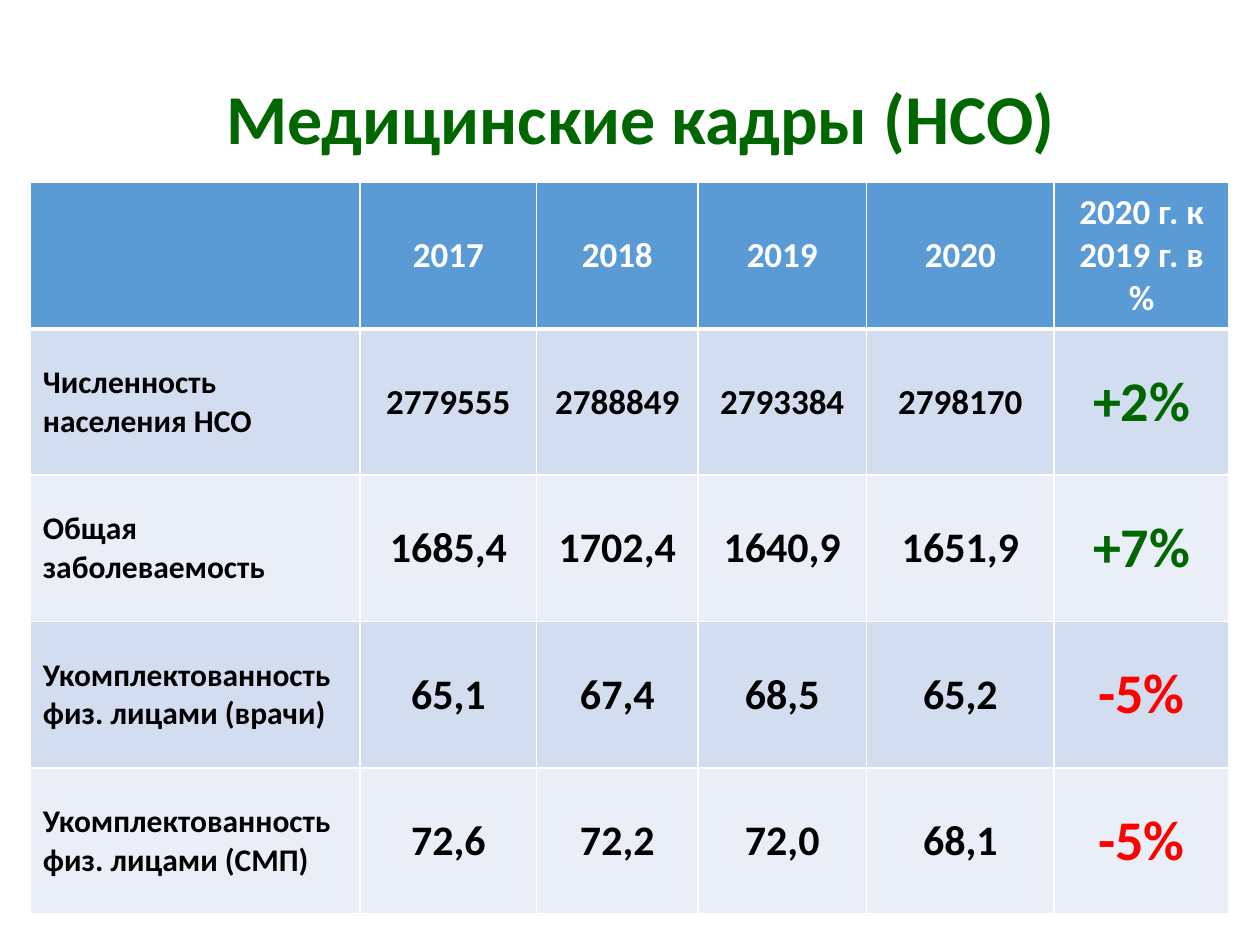
from dataclasses import dataclass

from lxml import etree
from pptx import Presentation
from pptx.dml.color import RGBColor
from pptx.enum import text
from pptx.oxml import ns
from pptx.util import Cm, Pt


@dataclass(frozen=True)
class Theme:
    font: str = "Calibri"
    white: str = "FFFFFF"
    black: str = "000000"
    green: str = "006600"
    red: str = "FF0000"
    header: str = "5B9BD5"
    bands: tuple = ("D2DEEF", "EAEFF7")
    title_size: int = 40
    header_size: int = 20
    label_size: int = 18
    population_size: int = 20
    value_size: int = 24
    change_size: int = 32
    thin: int = 1
    thick: int = 3


THEME = Theme()
HEADINGS = ["", "2017", "2018", "2019", "2020", "2020 г. к 2019 г. в %"]
INDICATORS = [
    ("Численность населения НСО", ["2779555", "2788849", "2793384", "2798170"], "+2%", THEME.population_size),
    ("Общая заболеваемость", ["1685,4", "1702,4", "1640,9", "1651,9"], "+7%", THEME.value_size),
    ("Укомплектованность физ. лицами (врачи)", ["65,1", "67,4", "68,5", "65,2"], "-5%", THEME.value_size),
    ("Укомплектованность физ. лицами (СМП)", ["72,6", "72,2", "72,0", "68,1"], "-5%", THEME.value_size),
]
COLUMN_WIDTHS = [6.65, 3.56, 3.25, 3.4, 3.78, 3.53]
ROW_HEIGHT = 2.95


def write(frame, words, *, size, color, align=text.PP_ALIGN.CENTER):
    para = frame.paragraphs[0]
    para.alignment = align
    span = para.add_run()
    span.text = words
    span.font.name = THEME.font
    span.font.size = Pt(size)
    span.font.bold = True
    span.font.color.rgb = RGBColor.from_string(color)


def add_borders(cell, top, bottom):
    properties = cell._tc.get_or_add_tcPr()
    widths = {"L": THEME.thin, "R": THEME.thin, "T": top, "B": bottom}
    for side, width in widths.items():
        line = etree.SubElement(properties, ns.qn(f"a:ln{side}"), w=str(Pt(width)))
        fill = etree.SubElement(line, ns.qn("a:solidFill"))
        etree.SubElement(fill, ns.qn("a:srgbClr"), val=THEME.white)


def fill_cell(cell, words, *, fill, top=THEME.thin, bottom=THEME.thin, **style):
    add_borders(cell, top, bottom)
    cell.fill.solid()
    cell.fill.fore_color.rgb = RGBColor.from_string(fill)
    cell.vertical_anchor = text.MSO_ANCHOR.MIDDLE
    if words:
        write(cell.text_frame, words, **style)


def add_title(page, words):
    box = page.shapes.add_textbox(Cm(1.04), Cm(1.37), Cm(23.75), Cm(1.96))
    box.text_frame.word_wrap = True
    box.text_frame.auto_size = text.MSO_AUTO_SIZE.SHAPE_TO_FIT_TEXT
    write(box.text_frame, words, size=THEME.title_size, color=THEME.green)


def add_staff_table(page):
    row_count = len(INDICATORS) + 1
    table = page.shapes.add_table(
        row_count, len(HEADINGS), Cm(0.61), Cm(3.68),
        Cm(sum(COLUMN_WIDTHS)), Cm(ROW_HEIGHT * row_count),
    ).table
    for column, width in zip(table.columns, COLUMN_WIDTHS):
        column.width = Cm(width)
    for row in table.rows:
        row.height = Cm(ROW_HEIGHT)

    for column, heading in enumerate(HEADINGS):
        fill_cell(table.cell(0, column), heading, fill=THEME.header, bottom=THEME.thick,
                  size=THEME.header_size, color=THEME.white)

    for row, (label, values, change, size) in enumerate(INDICATORS, start=1):
        look = {
            "fill": THEME.bands[(row - 1) % 2],
            "top": THEME.thick if row == 1 else THEME.thin,
        }
        fill_cell(table.cell(row, 0), label, size=THEME.label_size, color=THEME.black,
                  align=text.PP_ALIGN.LEFT, **look)
        for column, value in enumerate(values, start=1):
            fill_cell(table.cell(row, column), value, size=size, color=THEME.black, **look)
        change_color = THEME.green if change.startswith("+") else THEME.red
        fill_cell(table.cell(row, len(HEADINGS) - 1), change, size=THEME.change_size,
                  color=change_color, **look)


def main():
    deck = Presentation()
    deck.slide_width, deck.slide_height = Cm(25.4), Cm(19.05)
    page = deck.slides.add_slide(deck.slide_layouts[6])
    add_title(page, "Медицинские кадры (НСО)")
    add_staff_table(page)
    deck.save("out.pptx")


if __name__ == "__main__":
    main()
